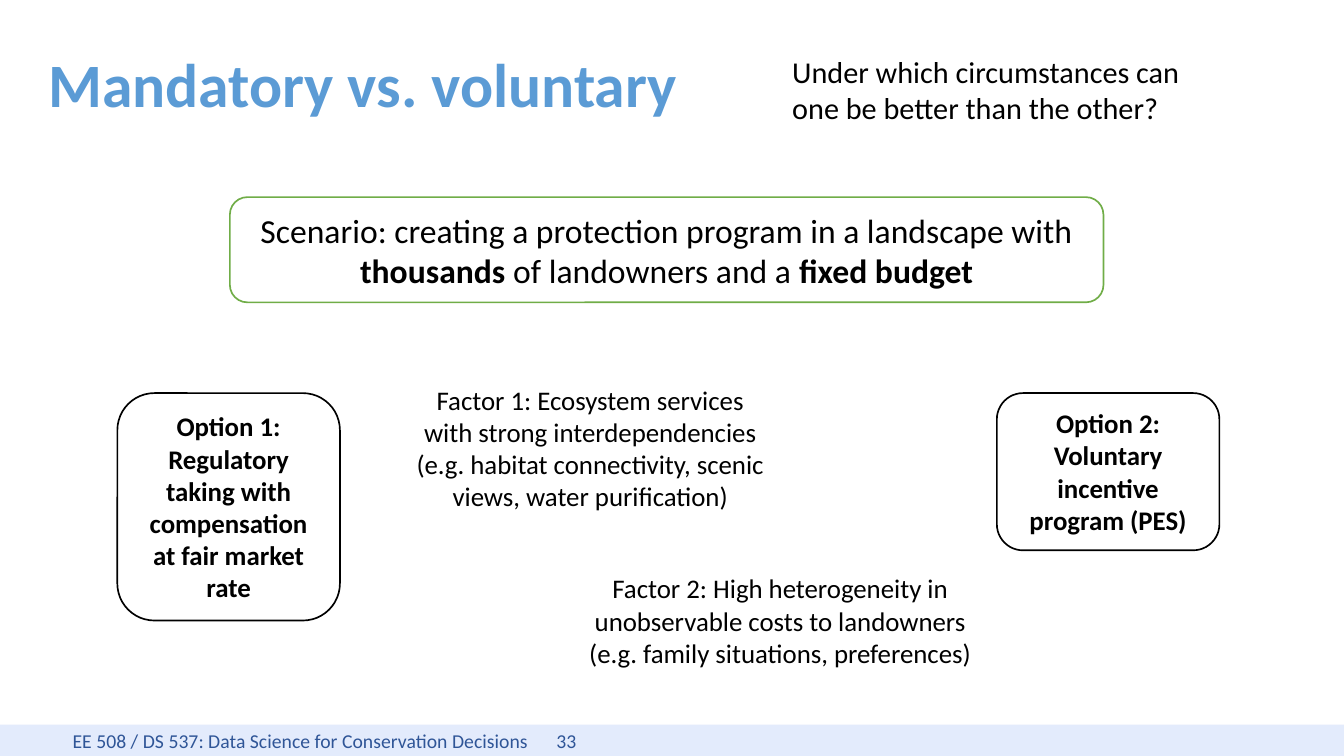
from pptx import Presentation
from pptx.dml.color import RGBColor
from pptx.enum.shapes import MSO_SHAPE as Shape
from pptx.enum.text import MSO_ANCHOR as Anchor, PP_ALIGN as Align
from pptx.oxml.ns import qn
from pptx.util import Inches, Pt
from lxml.etree import SubElement

BLACK = RGBColor(0x00, 0x00, 0x00)
WHITE = RGBColor(0xFF, 0xFF, 0xFF)
TITLE_BLUE = RGBColor(0x5B, 0x9B, 0xD5)
FOOTER_BLUE = RGBColor(0x2F, 0x55, 0x97)
FOOTER_FILL = RGBColor(0xE3, 0xEB, 0xFC)
GREEN = RGBColor(0x70, 0xAD, 0x47)

OPTION_TOP, OPTION_WIDTH = 52, 16.56


class SlideBuilder:
    font_name = "Calibri"

    def __init__(self, deck):
        self.slide = deck.slides.add_slide(deck.slide_layouts[6])
        self.column = deck.slide_width / 100
        self.row = deck.slide_height / 100

    def area(self, left, top, width, height):
        return (round(left * self.column), round(top * self.row),
                round(width * self.column), round(height * self.row))

    def fill_text(self, holder, parts, size, color=BLACK, align=Align.LEFT,
                  anchor=Anchor.TOP):
        frame = holder.text_frame
        frame.word_wrap = True
        frame.vertical_anchor = anchor
        paragraph = frame.paragraphs[0]
        paragraph.alignment = align
        for wording, bold in parts:
            run = paragraph.add_run()
            run.text = wording
            run.font.name = self.font_name
            run.font.size = Pt(size)
            run.font.bold = bold
            run.font.color.rgb = color
        return paragraph

    def text(self, place, wording, size, bold=False, **style):
        label = self.slide.shapes.add_textbox(*self.area(*place))
        return self.fill_text(label, [(wording, bold)], size, **style)

    def card(self, place, parts, size, line=BLACK, anchor=Anchor.TOP):
        card = self.slide.shapes.add_shape(Shape.ROUNDED_RECTANGLE, *self.area(*place))
        card.shadow.inherit = False
        card.fill.solid()
        card.fill.fore_color.rgb = WHITE
        card.line.color.rgb = line
        card.line.width = Pt(1)
        self.fill_text(card, parts, size, align=Align.CENTER, anchor=anchor)

    def footer(self, place, course, number):
        band = self.slide.shapes.add_shape(Shape.RECTANGLE, *self.area(*place))
        band.shadow.inherit = False
        band.fill.solid()
        band.fill.fore_color.rgb = FOOTER_FILL
        band.line.fill.background()
        band.text_frame.margin_left = Inches(0.6)
        band.text_frame.margin_top = band.text_frame.margin_bottom = 0
        paragraph = self.fill_text(band, [(f"{course}\t{number}", False)], 11.7,
                                   color=FOOTER_BLUE, anchor=Anchor.MIDDLE)
        stops = SubElement(paragraph._p.get_or_add_pPr(), qn("a:tabLst"))
        SubElement(stops, qn("a:tab"), pos=str(Inches(4)), algn="l")


def main():
    deck = Presentation()
    deck.slide_width = Inches(11.11)
    deck.slide_height = Inches(6.25)
    page = SlideBuilder(deck)

    page.footer((0, 95.84, 100, 4.16),
                "EE 508 / DS 537: Data Science for Conservation Decisions", 33)
    title = page.text((2.7, 4.64, 95.32, 13.92), "Mandatory vs. voluntary", 36.7,
                      bold=True, color=TITLE_BLUE, anchor=Anchor.MIDDLE)
    title.line_spacing = 0.9
    page.text((58.06, 6.24, 31.5, 11.36),
              "Under which circumstances can one be better than the other?", 18)

    page.card((17.1, 26.08, 65, 13.92), [
        ("Scenario: creating a protection program in a landscape with ", False),
        ("thousands ", True),
        ("of landowners and a ", False),
        ("fixed budget", True),
    ], 20, line=GREEN, anchor=Anchor.MIDDLE)

    options = [
        (8.73, 30.08, "Option 1: Regulatory taking with compensation at fair market rate"),
        (74.17, 20.8, "Option 2: Voluntary incentive program (PES)"),
    ]
    for left, height, option in options:
        page.card((left, OPTION_TOP, OPTION_WIDTH, height), [(option, True)], 16)

    factors = [
        ((29.88, 49.92, 28.08, 18.88),
         "Factor 1: Ecosystem services with strong interdependencies "
         "(e.g. habitat connectivity, scenic views, water purification)"),
        ((42.3, 74.88, 31.5, 14.56),
         "Factor 2: High heterogeneity in unobservable costs to landowners "
         "(e.g. family situations, preferences)"),
    ]
    for place, factor in factors:
        page.text(place, factor, 16, align=Align.CENTER)

    deck.save("out.pptx")


if __name__ == "__main__":
    main()
